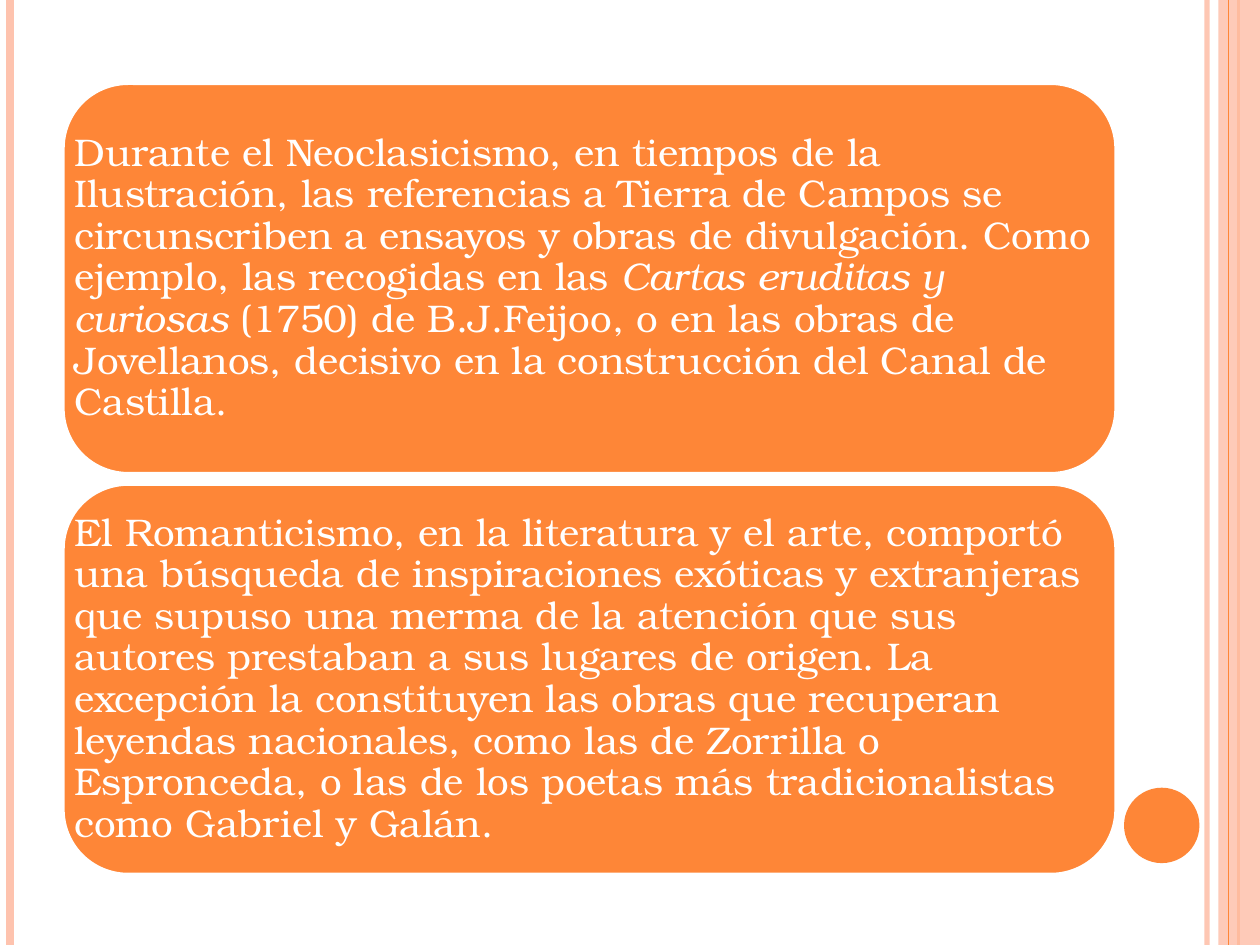
from dataclasses import dataclass

from lxml.etree import SubElement
from pptx import Presentation
from pptx.dml.color import RGBColor
from pptx.enum.shapes import MSO_CONNECTOR as Conn, MSO_SHAPE as Kind
from pptx.enum.text import MSO_ANCHOR as Anchor
from pptx.oxml.ns import qn
from pptx.util import Cm, Pt

COLORS = {"orange": "FE8637", "peach": "FEC3AE", "white": "FFFFFF"}
FONT = "TeX Gyre Bonum"
WIDTH, HEIGHT = 25.4, 19.05
LEFT, TOP, CARD_W, CARD_H, STEP = 1.27, 1.68, 21.23, 7.87, 8.08
INSET = 0.23


@dataclass
class Stripe:
    x: float
    color: str
    weight: float
    alpha: int = 100


@dataclass
class Run:
    text: str
    italic: bool = False


BACK = [
    Stripe(24.33, "peach", 3, 93),
    Stripe(0.2, "peach", 4.5),
    Stripe(24.97, "orange", 1.5),
]
FRONT = Stripe(24.77, "orange", 0.75)

CARDS = [
    [
        Run("Durante el Neoclasicismo, en tiempos de la Ilustración, las "
            "referencias a Tierra de Campos se circunscriben a ensayos y obras "
            "de divulgación. Como ejemplo, las recogidas en las "),
        Run("Cartas eruditas y curiosas ", True),
        Run("(1750) de B.J.Feijoo, o en las obras de Jovellanos, decisivo en "
            "la construcción del Canal de Castilla."),
    ],
    [
        Run("El Romanticismo, en la literatura y el arte, comportó una búsqueda "
            "de inspiraciones exóticas y extranjeras que supuso una merma de la "
            "atención que sus autores prestaban a sus lugares de origen. La "
            "excepción la constituyen las obras que recuperan leyendas "
            "nacionales, como las de Zorrilla o Espronceda, o las de los poetas "
            "más tradicionalistas como Gabriel y Galán."),
    ],
]


def rgb(name: str) -> RGBColor:
    return RGBColor.from_string(COLORS[name])


def fade(shape, alpha: int) -> None:
    """Make the first colour of the shape partly transparent."""
    tint = next(shape._element.spPr.iter(qn("a:srgbClr")))
    SubElement(tint, qn("a:alpha"), val=str(alpha * 1000))


def draw_stripe(shapes, stripe: Stripe) -> None:
    x = Cm(stripe.x)
    line = shapes.add_connector(Conn.STRAIGHT, x, 0, x, Cm(HEIGHT))
    line.line.color.rgb = rgb(stripe.color)
    line.line.width = Pt(stripe.weight)
    if stripe.alpha < 100:
        fade(line, stripe.alpha)
    SubElement(line._element.spPr, qn("a:effectLst"))


def draw_shape(shapes, kind: Kind, box: tuple, color: str):
    shape = shapes.add_shape(kind, *map(Cm, box))
    shape.shadow.inherit = False
    shape.fill.solid()
    shape.fill.fore_color.rgb = rgb(color)
    shape.line.fill.background()
    return shape


def draw_card(shapes, top: float, runs: list[Run]) -> None:
    box = (LEFT, top, CARD_W, CARD_H)
    card = draw_shape(shapes, Kind.ROUNDED_RECTANGLE, box, "orange")
    card.line.color.rgb = rgb("white")
    card.line.width = Pt(2)

    # The text spans the full card, past its rounded corners
    frame = shapes.add_textbox(*map(Cm, box)).text_frame
    frame.word_wrap = True
    frame.vertical_anchor = Anchor.MIDDLE
    frame.margin_left = frame.margin_right = Cm(INSET)
    frame.margin_top = frame.margin_bottom = Cm(INSET)
    para = frame.paragraphs[0]
    para.line_spacing = 0.9
    para.font.name = FONT
    para.font.size = Pt(22)
    para.font.color.rgb = rgb("white")
    for item in runs:
        run = para.add_run()
        run.text = item.text
        if item.italic:
            run.font.italic = True


def main() -> None:
    deck = Presentation()
    deck.slide_width, deck.slide_height = Cm(WIDTH), Cm(HEIGHT)
    shapes = deck.slides.add_slide(deck.slide_layouts[6]).shapes

    # Side stripes and dot
    for stripe in BACK:
        draw_stripe(shapes, stripe)
    band = draw_shape(shapes, Kind.RECTANGLE, (24.56, 0, 0.84, HEIGHT), "peach")
    fade(band, 87)
    draw_stripe(shapes, FRONT)
    draw_shape(shapes, Kind.OVAL, (22.66, 15.88, 1.52, 1.52), "orange")

    # Text cards
    for i, runs in enumerate(CARDS):
        draw_card(shapes, TOP + i * STEP, runs)

    deck.save("out.pptx")


if __name__ == "__main__":
    main()
